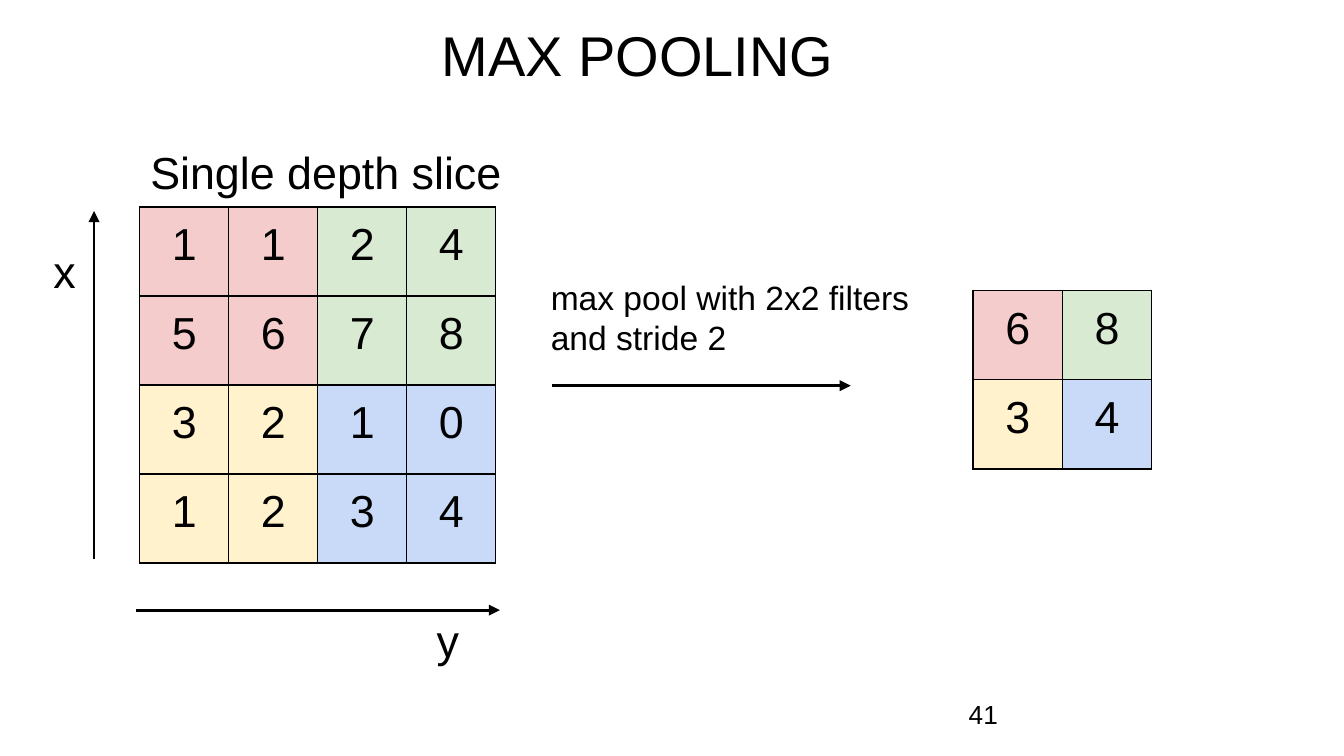
import lxml.etree
import pptx
import pptx.dml.color
import pptx.enum.shapes
import pptx.enum.text
import pptx.oxml.ns
import pptx.util

Inches = pptx.util.Inches
qn = pptx.oxml.ns.qn
ALIGN = pptx.enum.text.PP_ALIGN
ANCHOR = pptx.enum.text.MSO_ANCHOR

BLACK = "000000"
QUADRANT_FILLS = [["F4CCCC", "D9EAD3"], ["FFF2CC", "C9DAF8"]]
INSET = Inches(0.1)


def color(hex_string):
    return pptx.dml.color.RGBColor.from_string(hex_string)


def write_text(frame, text, size=24, align=ALIGN.LEFT):
    paragraph = frame.paragraphs[0]
    paragraph.alignment = align
    run = paragraph.add_run()
    run.text = text
    run.font.name = "Arial"
    run.font.size = pptx.util.Pt(size)
    run.font.color.rgb = color(BLACK)


# A 16:9 slide
presentation = pptx.Presentation()
presentation.slide_width = Inches(10)
presentation.slide_height = Inches(10) * 9 // 16
slide = presentation.slides.add_slide(presentation.slide_layouts[6])

# Title, labels and slide number
labels = [
    ("MAX POOLING", 3.19, 0.05, 4.67, 0.72, 30, ANCHOR.TOP),
    ("Single depth slice", 1.02, 0.98, 2.86, 0.62, 24, ANCHOR.TOP),
    ("x", 0.3, 1.71, 0.43, 0.51, 24, ANCHOR.TOP),
    ("y", 3.15, 4.46, 0.43, 0.4, 24, ANCHOR.TOP),
    ("max pool with 2x2 filters and stride 2", 4, 1.96, 2.93, 0.8, 18, ANCHOR.TOP),
    ("41", 7.11, 5.1, 0.6, 0.43, 14, ANCHOR.MIDDLE),
]
for text, left, top, width, height, size, anchor in labels:
    box = slide.shapes.add_textbox(Inches(left), Inches(top), Inches(width), Inches(height))
    frame = box.text_frame
    frame.word_wrap = True
    frame.vertical_anchor = anchor
    frame.margin_left = frame.margin_right = INSET
    frame.margin_top = frame.margin_bottom = INSET
    write_text(frame, text, size=size)

# Input slice and its pooled result; every quadrant has its own fill
depth_slice = [[1, 1, 2, 4], [5, 6, 7, 8], [3, 2, 1, 0], [1, 2, 3, 4]]
pooled = [[6, 8], [3, 4]]
for values, left, top, side in [(depth_slice, 1.04, 1.54, 2.65), (pooled, 7.24, 2.16, 1.33)]:
    count = len(values)
    table = slide.shapes.add_table(
        count, count, Inches(left), Inches(top), Inches(side), Inches(side)).table
    table.first_row = table.horz_banding = False
    for row, row_values in enumerate(values):
        for column, value in enumerate(row_values):
            cell = table.cell(row, column)
            cell.margin_left = cell.margin_right = INSET
            cell.margin_top = cell.margin_bottom = INSET
            properties = cell._tc.get_or_add_tcPr()
            for edge in ("a:lnL", "a:lnR", "a:lnT", "a:lnB"):
                border = lxml.etree.SubElement(properties, qn(edge), w=str(pptx.util.Pt(0.75)))
                border_fill = lxml.etree.SubElement(border, qn("a:solidFill"))
                lxml.etree.SubElement(border_fill, qn("a:srgbClr"), val=BLACK)
            cell.fill.solid()
            cell.fill.fore_color.rgb = color(QUADRANT_FILLS[row * 2 // count][column * 2 // count])
            write_text(cell.text_frame, str(value), align=ALIGN.CENTER)

# Axis arrows and the pooling arrow
arrows = [(0.7, 4.16, 0.7, 1.57), (1.01, 4.54, 3.72, 4.54), (4.11, 2.87, 6.33, 2.87)]
for ends in arrows:
    arrow = slide.shapes.add_connector(
        pptx.enum.shapes.MSO_CONNECTOR.STRAIGHT, *[Inches(end) for end in ends])
    arrow.line.width = pptx.util.Pt(1.5)
    arrow.line.color.rgb = color(BLACK)
    lxml.etree.SubElement(arrow.line._get_or_add_ln(), qn("a:tailEnd"), type="triangle")
    lxml.etree.SubElement(arrow._element.spPr, qn("a:effectLst"))

presentation.save("out.pptx")
